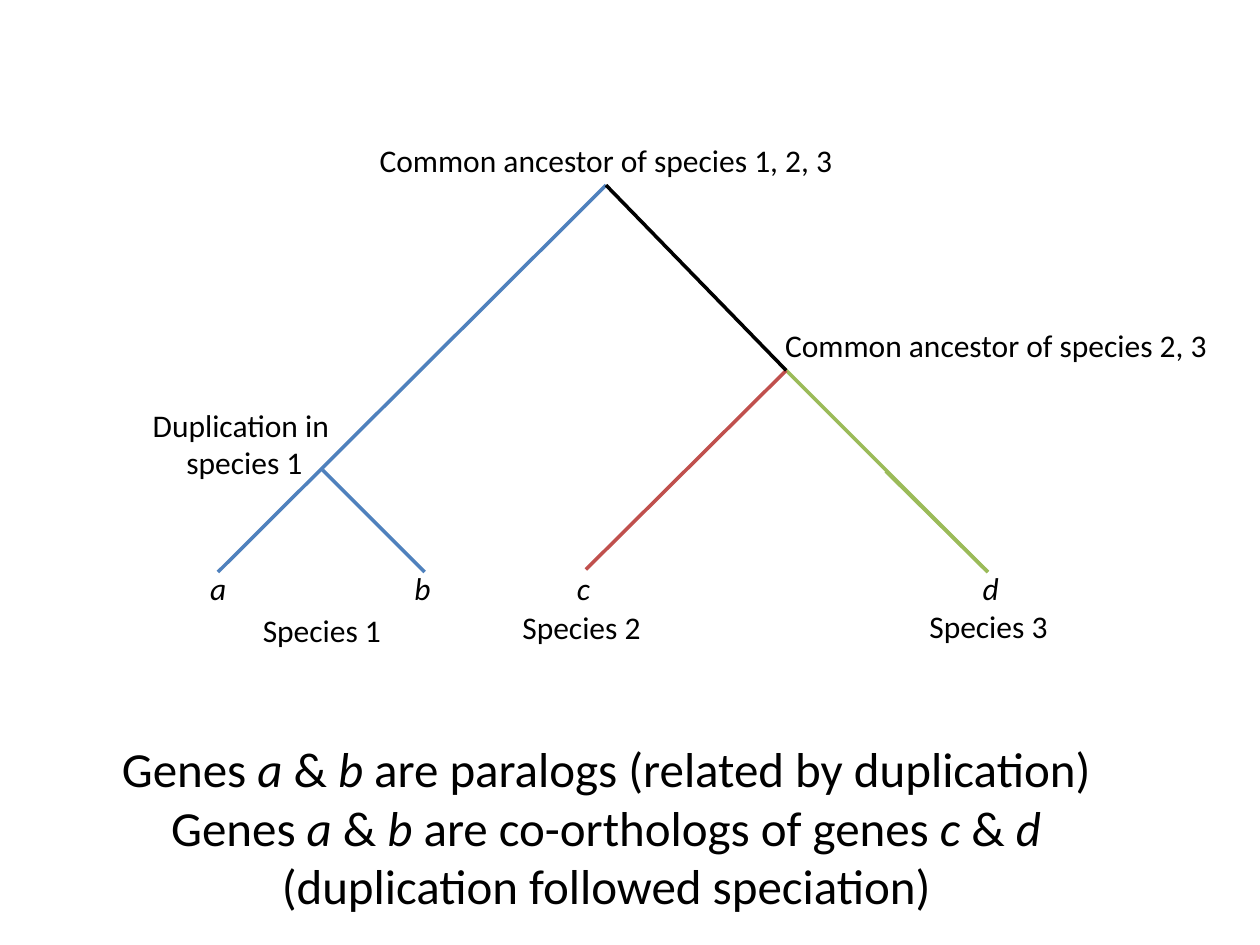
from lxml.etree import SubElement
from pptx import Presentation
from pptx.dml.color import RGBColor
from pptx.enum.shapes import MSO_CONNECTOR
from pptx.enum.text import MSO_AUTO_SIZE, PP_ALIGN
from pptx.oxml.ns import qn
from pptx.util import Inches, Pt

BLACK = RGBColor(0x00, 0x00, 0x00)
BLUE = RGBColor(0x4F, 0x81, 0xBD)
RED = RGBColor(0xC0, 0x50, 0x4D)
GREEN = RGBColor(0x9B, 0xBB, 0x59)


def add_text(slide, box, lines, size=18, align=PP_ALIGN.CENTER):
    frame = slide.shapes.add_textbox(*map(Inches, box)).text_frame
    frame.word_wrap = False
    frame.auto_size = MSO_AUTO_SIZE.SHAPE_TO_FIT_TEXT
    for row, line in enumerate(lines):
        para = frame.add_paragraph() if row else frame.paragraphs[0]
        para.alignment = align
        for text, slant in line:
            run = para.add_run()
            run.text = text
            font = run.font
            font.name = "Calibri"
            font.size = Pt(size)
            font.italic = slant
            font.color.rgb = BLACK


def add_branch(slide, start, end, color):
    ends = map(Inches, (*start, *end))
    line = slide.shapes.add_connector(MSO_CONNECTOR.STRAIGHT, *ends)
    line.line.color.rgb = color
    line.line.width = Pt(2)
    SubElement(line.element.spPr, qn("a:effectLst"))


def add_tree(slide, box):
    left, top, width, height = box
    base = top + height

    def spot(x, y):
        return left + x, top + y

    root, fork, split = spot(3.81, 0.47), spot(5.24, 1.94), spot(1.56, 2.73)
    tip_a, tip_b, tip_c, tip_d = [
        spot(x, y) for x, y in ((0.73, 3.54), (2.37, 3.54), (3.65, 3.52), (6.84, 3.54))
    ]
    for start, end, color in (
        (root, tip_a, BLUE),
        (fork, tip_d, GREEN),
        (fork, tip_c, RED),
        (fork, root, BLACK),
        (spot(6.03, 2.74), tip_d, GREEN),
        (split, tip_b, BLUE),
    ):
        add_branch(slide, start, end, color)

    for x, y, wide, group in ((1.89, 0.07, 3.84, "1, 2, 3"), (5.11, 1.54, 3.59, "2, 3")):
        label = f"Common ancestor of species {group}"
        add_text(slide, (*spot(x, y), wide, 0.4), [[(label, False)]])
    add_text(slide, (*spot(0.1, 2.17), 1.68, 0.71),
             [[("Duplication in ", False)], [("species 1", False)]])

    for gene, x, wide in (("a", 0.57, 0.33), ("b", 2.19, 0.33),
                          ("c", 3.48, 0.31), ("d", 6.7, 0.33)):
        add_text(slide, (left + x, base - 0.73, wide, 0.4),
                 [[(gene, True)]], align=PP_ALIGN.LEFT)
    for num, x, rise in ((1, 0.98, 0.4), (2, 3.04, 0.42), (3, 6.27, 0.43)):
        add_text(slide, (left + x, base - rise, 1.15, 0.4),
                 [[(f"Species {num}", False)]])


def add_notes(slide, box):
    pair = [("Genes ", False), ("a ", True), ("& ", False), ("b ", True)]
    add_text(slide, box, [
        pair + [("are paralogs (related by duplication)", False)],
        pair + [("are co-orthologs of genes ", False), ("c ", True),
                ("& ", False), ("d", True)],
        [("(duplication followed speciation)", False)],
    ], size=28)


def main():
    deck = Presentation()
    deck.slide_width, deck.slide_height = Inches(10), Inches(7.5)
    slide = deck.slides.add_slide(deck.slide_layouts[6])
    add_tree(slide, (1, 1, 8.7, 4.2))
    add_notes(slide, (0.82, 5.81, 7.98, 1.51))
    deck.save("out.pptx")


if __name__ == "__main__":
    main()
